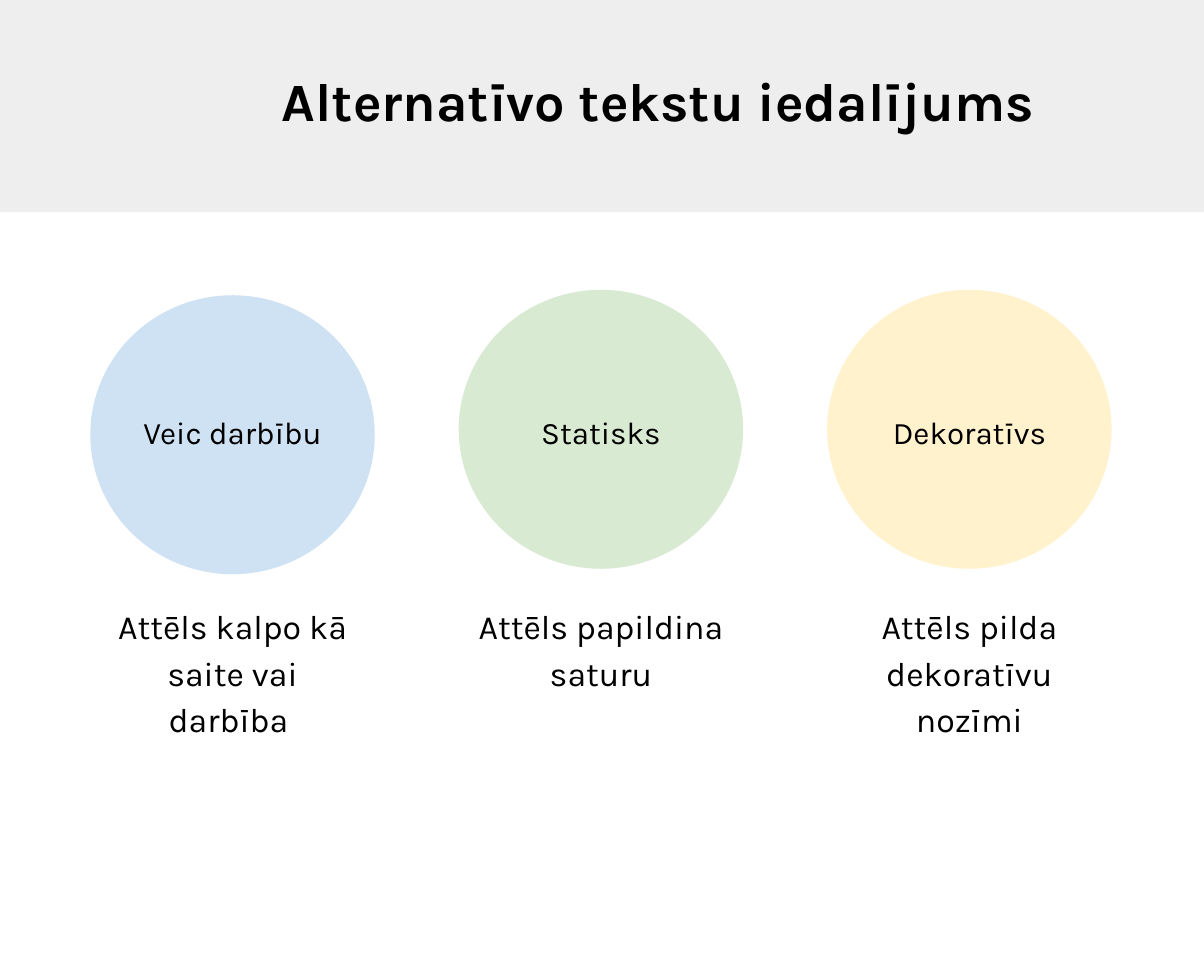
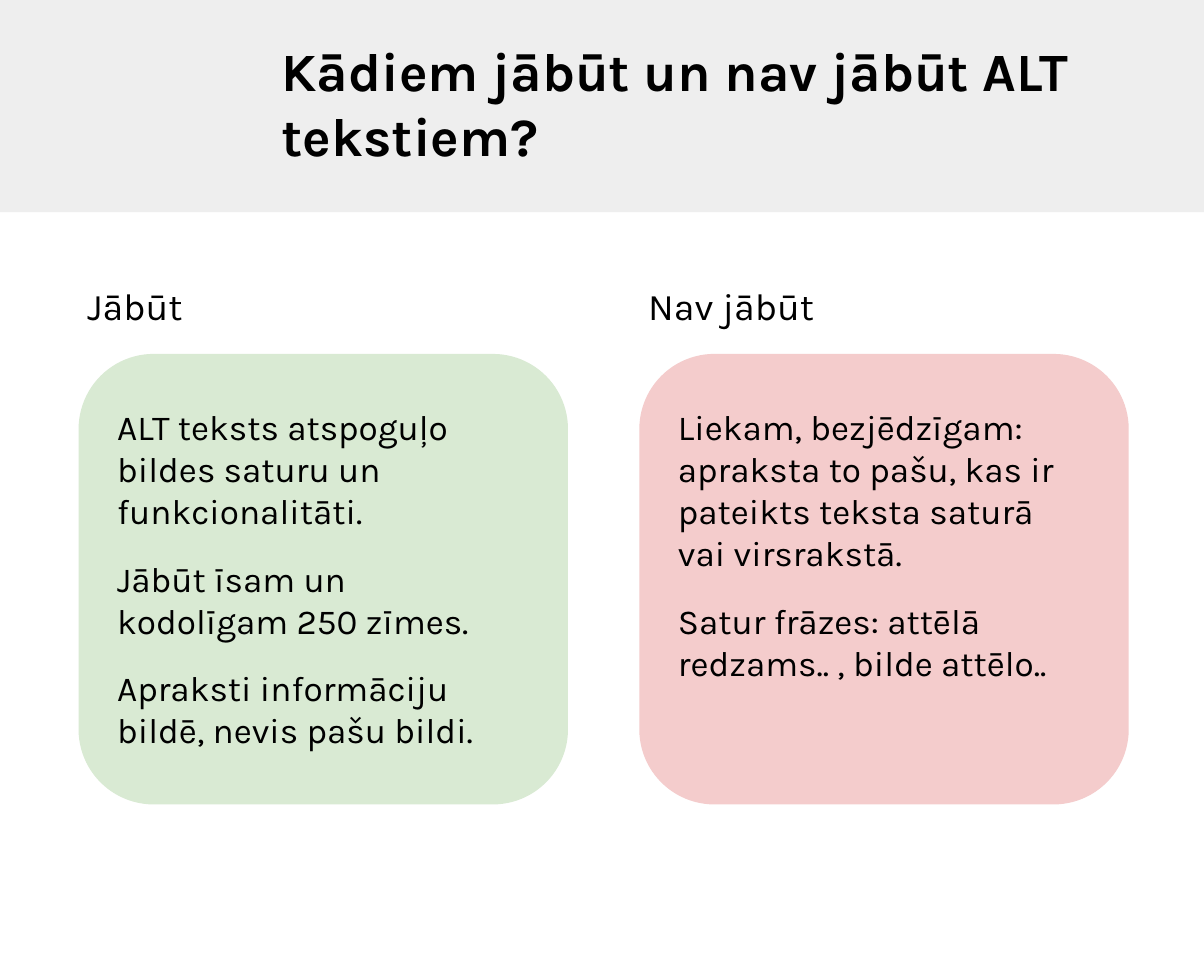
"""Build two slides on the kinds of alternative text and how to write it."""
from pptx import Presentation
from pptx.dml.color import RGBColor
from pptx.enum.shapes import MSO_SHAPE as SHAPE
from pptx.enum.text import MSO_ANCHOR as ANCHOR, PP_ALIGN as ALIGN
from pptx.util import Inches, Pt

PAGE_WIDTH = 40 / 3
PAGE_HEIGHT = 32 / 3
FONT = "Karla"
BLACK = RGBColor(0x00, 0x00, 0x00)
GREY = RGBColor(0xEE, 0xEE, 0xEE)
BLUE = RGBColor(0xCF, 0xE2, 0xF3)
GREEN = RGBColor(0xD9, 0xEA, 0xD3)
YELLOW = RGBColor(0xFF, 0xF2, 0xCC)
RED = RGBColor(0xF4, 0xCC, 0xCC)


def add_block(page, kind, left, top, width, height, color):
    block = page.shapes.add_shape(kind, Inches(left), Inches(top), Inches(width), Inches(height))
    block.shadow.inherit = False
    block.fill.solid()
    block.fill.fore_color.rgb = color
    block.line.fill.background()
    return block


def add_text(page, text, left, top, width, height, size, inset, align=ALIGN.LEFT, bold=False, spacing=1.0, gap=0):
    box = page.shapes.add_textbox(Inches(left), Inches(top), Inches(width), Inches(height))
    frame = box.text_frame
    frame.word_wrap = True
    frame.vertical_anchor = ANCHOR.TOP
    frame.margin_left = frame.margin_right = Inches(inset)
    frame.margin_top = frame.margin_bottom = Inches(inset)
    frame.text = text
    for index, para in enumerate(frame.paragraphs):
        para.alignment = align
        para.line_spacing = spacing
        para.space_before = Pt(gap if index else 0)
        for span in para.runs:
            span.font.name = FONT
            span.font.size = Pt(size)
            span.font.bold = bold
            span.font.color.rgb = BLACK


deck = Presentation()
deck.slide_width = Inches(PAGE_WIDTH)
deck.slide_height = Inches(PAGE_HEIGHT)

titles = [
    ("Alternatīvo tekstu iedalījums", 0.6),
    ("Kādiem jābūt un nav jābūt ALT tekstiem?", 0.27),
]
pages = []
for title, title_top in titles:
    page = deck.slides.add_slide(deck.slide_layouts[6])
    add_block(page, SHAPE.RECTANGLE, 0, 0, PAGE_WIDTH, 2.35, GREY)
    add_text(page, title, 2.97, title_top, 10.19, 0.97, 43, 0.15, bold=True)
    pages.append(page)
kinds_page, rules_page = pages

kinds = [
    ("Veic darbību", "Attēls kalpo kā saite vai darbība ", BLUE, 3.27),
    ("Statisks", "Attēls papildina saturu", GREEN, 3.21),
    ("Dekoratīvs", "Attēls pilda dekoratīvu nozīmi", YELLOW, 3.21),
]
for column, (label, caption, color, circle_top) in enumerate(kinds):
    left = 1 + column * 4.08
    add_block(kinds_page, SHAPE.OVAL, left, circle_top, 3.15, 3.09, color)
    add_text(kinds_page, label, left + 0.28, 4.43, 2.59, 0.66, 25, 0.15, ALIGN.CENTER)
    add_text(kinds_page, caption, left, 6.44, 3.15, 1.64, 27, 0.2, ALIGN.CENTER, spacing=1.15)

rules = [
    ("Jābūt", GREEN, [
        "ALT teksts atspoguļo bildes saturu un funkcionalitāti.",
        "Jābūt īsam un kodolīgam 250 zīmes.",
        "Apraksti informāciju bildē, nevis pašu bildi.",
    ]),
    ("Nav jābūt", RED, [
        "Liekam, bezjēdzīgam: apraksta to pašu, kas ir pateikts teksta saturā vai virsrakstā.",
        "Satur frāzes: attēlā redzams.. , bilde attēlo..",
    ]),
]
for column, (heading, color, advice) in enumerate(rules):
    left = 0.87 + column * 6.21
    add_block(rules_page, SHAPE.ROUNDED_RECTANGLE, left, 3.92, 5.42, 4.99, color)
    add_text(rules_page, heading, left, 3.03, 4.76, 0.97, 30, 0.1)
    add_text(rules_page, "\n".join(advice), left + 0.33, 4.39, 4.57, 3.28, 28, 0.1, gap=20)

deck.save("out.pptx")
